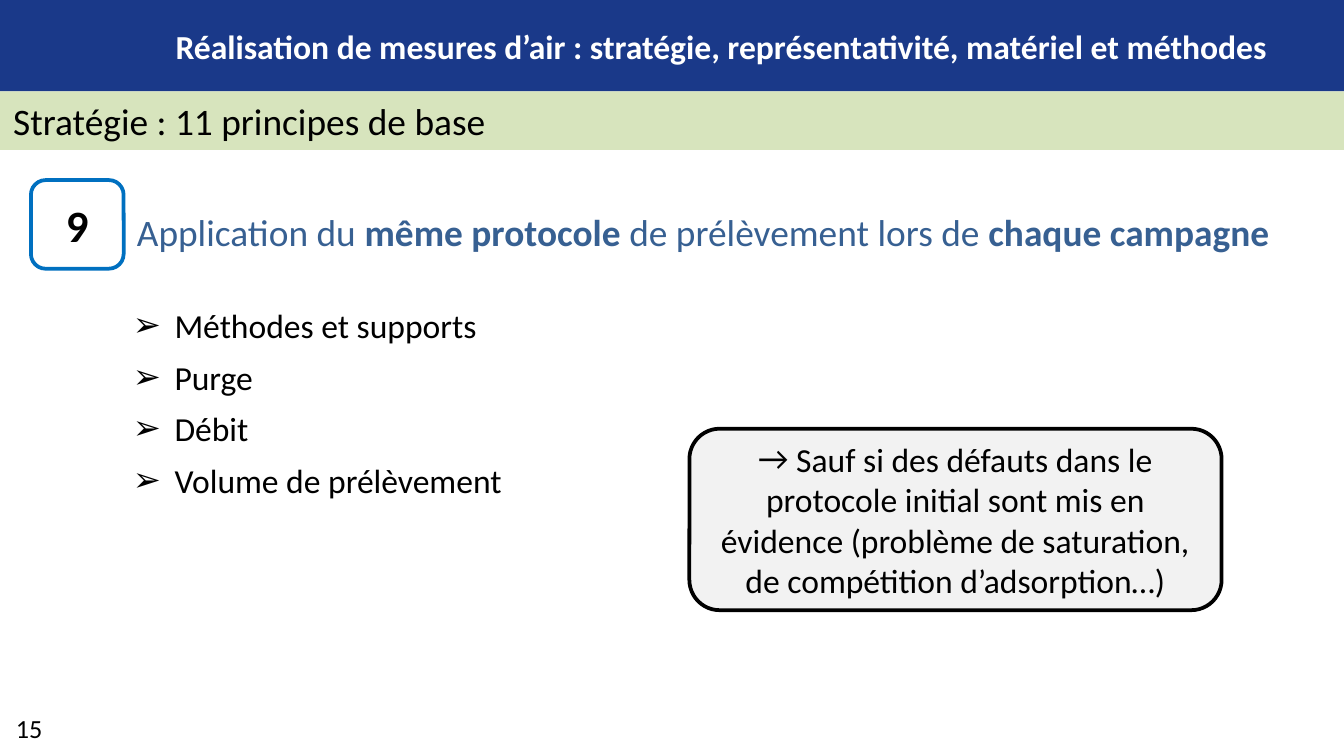
import pptx
import pptx.dml.color
import pptx.enum.shapes
import pptx.enum.text
import pptx.oxml.ns
import pptx.util
from lxml import etree

COLORS = {
    "navy": "1A3989", "green": "D7E4BD", "blue": "0070C0", "slate": "376092",
    "grey": "F2F2F2", "white": "FFFFFF", "black": "000000",
}
FONT = "Calibri"
UNIT = pptx.util.Inches(0.1)  # one grid column or row
COLUMNS, ROWS = 100, 56.25
SHAPES = pptx.enum.shapes.MSO_SHAPE
ALIGN = pptx.enum.text.PP_ALIGN
ANCHOR = pptx.enum.text.MSO_ANCHOR


def rgb(name):
    return pptx.dml.color.RGBColor.from_string(COLORS[name])


def grid(box):
    """Turn left, top, width and height in grid units into lengths."""
    return [round(UNIT * share) for share in box]


def add_panel(slide, box, fill, outline=None, preset=SHAPES.RECTANGLE):
    panel = slide.shapes.add_shape(preset, *grid(box))
    panel.shadow.inherit = False
    panel.fill.solid()
    panel.fill.fore_color.rgb = rgb(fill)
    if outline:
        panel.line.color.rgb = rgb(outline)
        panel.line.width = pptx.util.Pt(2)
    else:
        panel.line.fill.background()
    return panel


def add_label(slide, box):
    return slide.shapes.add_textbox(*grid(box))


def set_bullet(paragraph, symbol, indent):
    """Give the paragraph a bullet hanging by an indent in grid units."""
    properties = paragraph._p.get_or_add_pPr()
    properties.set("marL", str(round(UNIT * indent)))
    properties.set("indent", str(-round(UNIT * indent)))
    for tag, attribute, value in (("a:buFont", "typeface", FONT),
                                  ("a:buChar", "char", symbol)):
        part = etree.SubElement(properties, pptx.oxml.ns.qn(tag))
        part.set(attribute, value)


def write(shape, paragraphs, size, color="black", align=ALIGN.LEFT,
          anchor=ANCHOR.TOP, wrap=True, bullet=None, indent=0, gap=0):
    """Fill a shape with paragraphs, each a list of (text, bold) runs."""
    frame = shape.text_frame
    frame.word_wrap = wrap
    frame.vertical_anchor = anchor
    font_format = {"name": FONT, "size": pptx.util.Pt(size)}
    for index, runs in enumerate(paragraphs):
        paragraph = frame.add_paragraph() if index else frame.paragraphs[0]
        paragraph.alignment = align
        if index and gap:
            paragraph.space_before = pptx.util.Pt(gap)
        if bullet:
            set_bullet(paragraph, bullet, indent)
        for text, bold in runs:
            run = paragraph.add_run()
            run.text = text
            for attribute, value in {**font_format, "bold": bold}.items():
                setattr(run.font, attribute, value)
            run.font.color.rgb = rgb(color)


def add_header(slide, box, title, section):
    left, top, width, height = box
    title_height = height * 0.61
    add_panel(slide, (left, top, width, title_height), "navy")
    write(add_label(slide, (left + 8.7, top + 1.45, width - 10, 4)),
          [[(title, True)]], 18, "white", ALIGN.CENTER)
    band = add_panel(
        slide, (left, top + title_height, width, height - title_height), "green")
    write(band, [[(section, False)]], 20)


def add_principle(slide, box, number, heading, points):
    left, top, width, height = box
    badge = add_panel(slide, (left, top, 6.9, 6.6), "white", "blue",
                      SHAPES.ROUNDED_RECTANGLE)
    write(badge, [[(number, True)]], 24, align=ALIGN.CENTER, anchor=ANCHOR.MIDDLE)
    text_left = left + 6.9
    text_width = width - 6.9
    write(add_label(slide, (text_left, top + 1.7, text_width, 4.4)),
          [heading], 20, "slate")
    write(add_label(slide, (text_left - 0.3, top + 8.8, text_width / 2, height - 9)),
          [[(point, False)] for point in points], 18,
          bullet="➢", indent=3.1, gap=6)


def add_exception(slide, box, text):
    callout = add_panel(slide, box, "grey", "black", SHAPES.ROUNDED_RECTANGLE)
    write(callout, [[(text, False)]], 18, align=ALIGN.CENTER,
          anchor=ANCHOR.MIDDLE, bullet="→")


def add_page_number(slide, box, number):
    write(add_label(slide, box), [[(number, False)]], 14, wrap=False)


def main():
    deck = pptx.Presentation()
    deck.slide_width, deck.slide_height = grid((COLUMNS, ROWS))
    slide = deck.slides.add_slide(deck.slide_layouts[6])
    add_header(
        slide, (0, 0, COLUMNS, 11.15),
        "Réalisation de mesures d’air : stratégie, représentativité, matériel et méthodes",
        "Stratégie : 11 principes de base")
    add_principle(
        slide, (2.3, 13.4, 95, 24.6), "9",
        [("Application du ", False), ("même protocole ", True),
         ("de prélèvement lors de ", False), ("chaque campagne", True)],
        ["Méthodes et supports", "Purge", "Débit", "Volume de prélèvement"])
    add_exception(
        slide, (51.3, 31.9, 39.6, 13.5),
        " Sauf si des défauts dans le protocole initial sont mis en évidence "
        "(problème de saturation, de compétition d’adsorption…)")
    add_page_number(slide, (0.2, 52.5, 5.3, 3.4), "15")
    deck.save("out.pptx")


if __name__ == "__main__":
    main()
